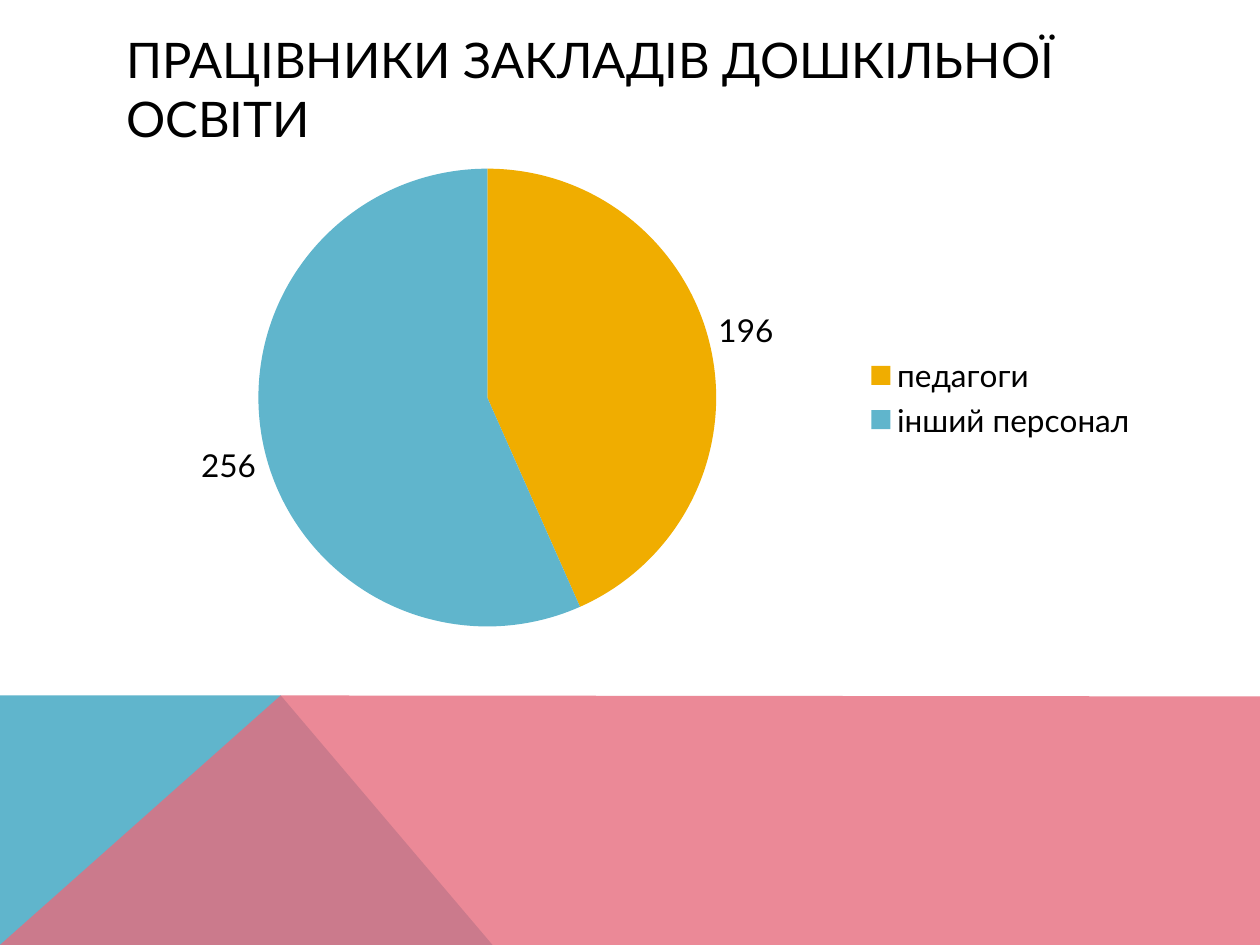
"""Build a slide with a pie chart of preschool staff above a triangular colour band."""
from lxml.etree import SubElement
from pptx import Presentation
from pptx.chart.data import CategoryChartData as ChartData
from pptx.dml.color import RGBColor
from pptx.enum.chart import XL_CHART_TYPE as ChartType
from pptx.enum.chart import XL_LABEL_POSITION as LabelPosition
from pptx.enum.chart import XL_LEGEND_POSITION as LegendPosition
from pptx.enum.text import MSO_ANCHOR as Anchor
from pptx.enum.text import PP_ALIGN as Align
from pptx.oxml.ns import qn
from pptx.util import Cm, Pt

BLACK = RGBColor(0x00, 0x00, 0x00)
AMBER = RGBColor(0xF0, 0xAD, 0x00)
BLUE = RGBColor(0x60, 0xB5, 0xCC)
ROSE = RGBColor(0xE6, 0x6C, 0x7D)
FONT = "Lato"


def format_font(font, size):
    for name, value in {"name": FONT, "size": Pt(size), "bold": False}.items():
        setattr(font, name, value)
    font.color.rgb = BLACK


deck = Presentation()
deck.slide_width, deck.slide_height = Cm(25.4), Cm(19.05)
page = deck.slides.add_slide(deck.slide_layouts[5])

left, right, bottom = Cm(0), Cm(25.4), Cm(19.05)
peak = (Cm(5.66), Cm(14.02))
bands = [
    ([(left, bottom), (left, peak[1]), peak, (Cm(9.93), bottom)], BLUE, 100),
    ([(left, bottom), peak, (right, Cm(14.04)), (right, bottom)], ROSE, 80),
]
for corners, color, opacity in bands:
    builder = page.shapes.build_freeform(*corners[0])
    builder.add_line_segments(corners[1:], close=True)
    band = builder.convert_to_shape()
    band.shadow.inherit = False
    band.line.fill.background()
    band.fill.solid()
    band.fill.fore_color.rgb = color
    if opacity < 100:
        tint = band.fill._xPr.find(qn("a:solidFill"))[0]
        SubElement(tint, qn("a:alpha")).set("val", str(opacity * 1000))

title = page.shapes.title
place = {"left": Cm(2.29), "top": Cm(1.02), "width": Cm(20.88), "height": Cm(1.52)}
for name, value in place.items():
    setattr(title, name, value)
title.text_frame.word_wrap = True
title.text_frame.vertical_anchor = Anchor.MIDDLE
para = title.text_frame.paragraphs[0]
para.alignment = Align.LEFT
span = para.add_run()
span.text = "ПРАЦІВНИКИ ЗАКЛАДІВ ДОШКІЛЬНОЇ ОСВІТИ"
format_font(span.font, 28)

data = ChartData()
data.categories = ["педагоги", "інший персонал"]
data.add_series("Series 1", [196, 256])
chart = page.shapes.add_chart(
    ChartType.PIE, Cm(2.29), Cm(3.05), Cm(20.9), Cm(9.93), data
).chart
format_font(chart.font, 18)
chart.has_title = False
chart.has_legend = True
chart.legend.position = LegendPosition.RIGHT
chart.legend.include_in_layout = False

plot = chart.plots[0]
plot.vary_by_categories = True
plot.has_data_labels = True
plot.data_labels.show_value = True
plot.data_labels.show_percentage = False
plot.data_labels.position = LabelPosition.OUTSIDE_END
for index, color in enumerate([AMBER, BLUE]):
    slice_fill = plot.series[0].points[index].format.fill
    slice_fill.solid()
    slice_fill.fore_color.rgb = color

deck.save("out.pptx")
